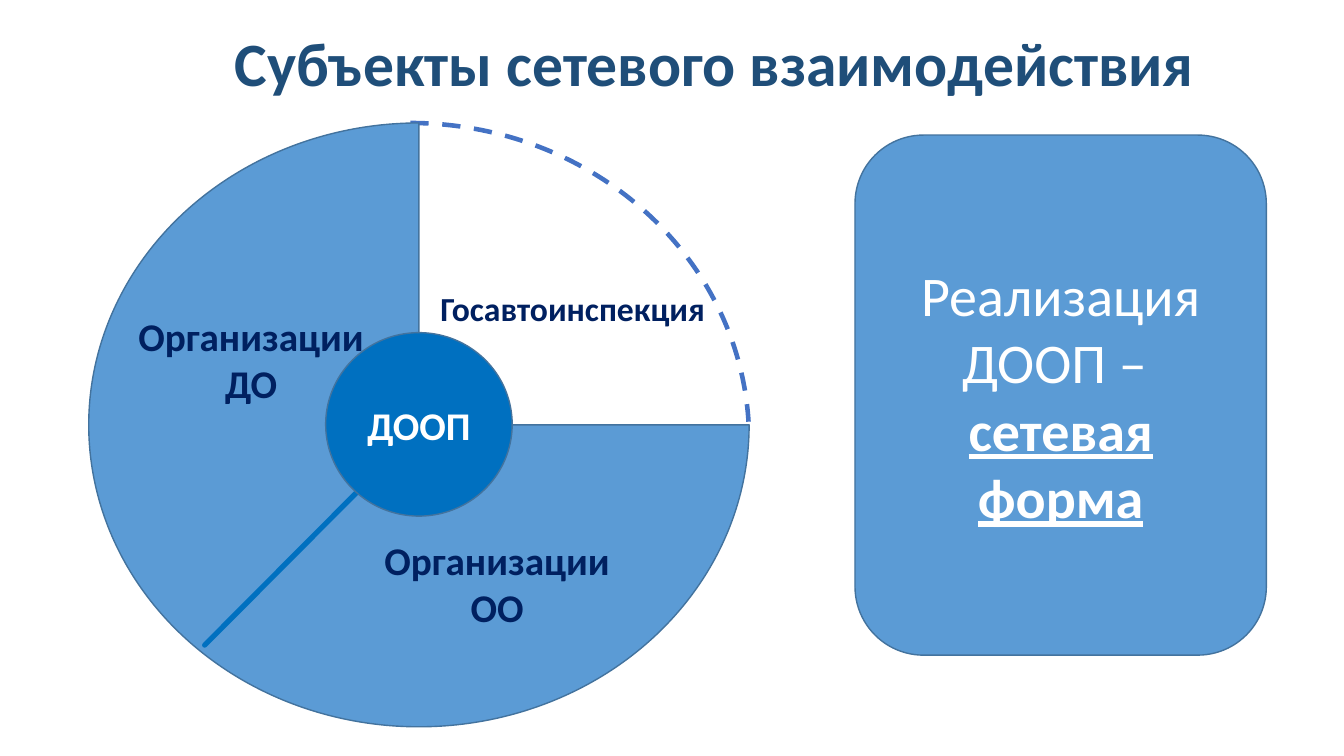
from dataclasses import dataclass

from lxml import etree
from pptx import Presentation
from pptx import util as u
from pptx.dml.color import RGBColor
from pptx.enum import dml, shapes, text
from pptx.oxml import ns

PX = 9144
FONT = "Calibri"
WHITE = RGBColor(0xFF, 0xFF, 0xFF)
SECTOR_BLUE = RGBColor(0x5B, 0x9B, 0xD5)
OUTLINE_BLUE = RGBColor(0x43, 0x73, 0x9E)
CORE_BLUE = RGBColor(0x00, 0x70, 0xC0)
ARC_BLUE = RGBColor(0x44, 0x72, 0xC4)
NAVY = RGBColor(0x00, 0x20, 0x60)
TITLE_BLUE = RGBColor(0x1F, 0x4E, 0x79)


@dataclass(frozen=True)
class Area:
    left: int
    top: int
    width: int
    height: int

    def emu(self) -> tuple[int, int, int, int]:
        return self.left * PX, self.top * PX, self.width * PX, self.height * PX


@dataclass(frozen=True)
class Line:
    words: str
    bold: bool = True
    underline: bool = False


@dataclass(frozen=True)
class Caption:
    lines: tuple[Line, ...]
    size: int
    color: RGBColor
    middle: bool = False
    left_inset: int = 0
    right_inset: int = 0
    spacing: float = 1.0


@dataclass(frozen=True)
class Figure:
    kind: shapes.MSO_SHAPE
    area: Area
    fill: RGBColor | None = None
    outline: RGBColor = OUTLINE_BLUE
    weight: float = 1
    dashed: bool = False
    angles: tuple[float, ...] = ()
    caption: Caption | None = None


@dataclass(frozen=True)
class Label:
    area: Area
    caption: Caption


def organization(left: int, top: int, name: str) -> Label:
    lines = (Line("Организации"), Line(name))
    return Label(Area(left, top, 244, 92), Caption(lines, 28, NAVY))


CORE_CAPTION = Caption((Line("ДООП"),), 28, WHITE, middle=True)
PANEL_CAPTION = Caption(
    (Line("Реализация ДООП – ", bold=False), Line("сетевая форма", underline=True)),
    40, WHITE, middle=True, left_inset=10, right_inset=10,
)
TITLE_CAPTION = Caption(
    (Line("Субъекты сетевого взаимодействия"),),
    44, TITLE_BLUE, middle=True, left_inset=161, spacing=0.9,
)

ARC = Figure(shapes.MSO_SHAPE.ARC, Area(71, 122, 672, 629), outline=ARC_BLUE,
             weight=3.25, dashed=True, angles=(162, 214.14))
SECTORS = Figure(shapes.MSO_SHAPE.PIE, Area(88, 122, 655, 599), SECTOR_BLUE,
                 angles=(0, 162))
CORE = Figure(shapes.MSO_SHAPE.OVAL, Area(323, 330, 185, 182), CORE_BLUE,
              caption=CORE_CAPTION)
PANEL = Figure(shapes.MSO_SHAPE.ROUNDED_RECTANGLE, Area(848, 134, 408, 516),
               SECTOR_BLUE, caption=PANEL_CAPTION)
LABELS = (
    organization(127, 305, "ДО"),
    organization(371, 527, "ОО"),
    Label(Area(404, 281, 328, 50), Caption((Line("Госавтоинспекция"),), 24, NAVY)),
    Label(Area(44, 26, 1169, 81), TITLE_CAPTION),
)


def write(box, caption: Caption) -> None:
    frame = box.text_frame
    frame.word_wrap = True
    frame.margin_left = caption.left_inset * PX
    frame.margin_right = caption.right_inset * PX
    anchors = text.MSO_ANCHOR
    frame.vertical_anchor = anchors.MIDDLE if caption.middle else anchors.TOP
    for index, line in enumerate(caption.lines):
        para = frame.add_paragraph() if index else frame.paragraphs[0]
        para.alignment = text.PP_ALIGN.CENTER
        para.line_spacing = caption.spacing
        span = para.add_run()
        span.text = line.words
        span.font.name = FONT
        span.font.size = u.Pt(caption.size)
        span.font.bold = line.bold
        span.font.underline = line.underline
        span.font.color.rgb = caption.color


def draw_figure(page, figure: Figure) -> None:
    shape = page.shapes.add_shape(figure.kind, *figure.area.emu())
    shape.shadow.inherit = False
    for index, angle in enumerate(figure.angles):
        shape.adjustments[index] = angle
    if figure.fill is None:
        shape.fill.background()
    else:
        shape.fill.solid()
        shape.fill.fore_color.rgb = figure.fill
    shape.line.color.rgb = figure.outline
    shape.line.width = u.Pt(figure.weight)
    if figure.dashed:
        shape.line.dash_style = dml.MSO_LINE.DASH
    if figure.caption:
        write(shape, figure.caption)


def draw_divider(page) -> None:
    ends = [value * PX for value in (203, 640, 416, 426)]
    divider = page.shapes.add_connector(shapes.MSO_CONNECTOR.STRAIGHT, *ends)
    divider.line.color.rgb = CORE_BLUE
    divider.line.width = u.Pt(3.75)
    divider.get_or_add_ln().set("cap", "rnd")
    etree.SubElement(divider._element.spPr, ns.qn("a:effectLst"))


def draw_label(page, label: Label) -> None:
    write(page.shapes.add_textbox(*label.area.emu()), label.caption)


def main() -> None:
    deck = Presentation()
    deck.slide_width, deck.slide_height = 1333 * PX, 750 * PX
    page = deck.slides.add_slide(deck.slide_layouts[6])
    draw_figure(page, ARC)
    draw_figure(page, SECTORS)
    draw_divider(page)
    draw_figure(page, CORE)
    for label in LABELS:
        draw_label(page, label)
    draw_figure(page, PANEL)
    deck.save("out.pptx")


if __name__ == "__main__":
    main()
